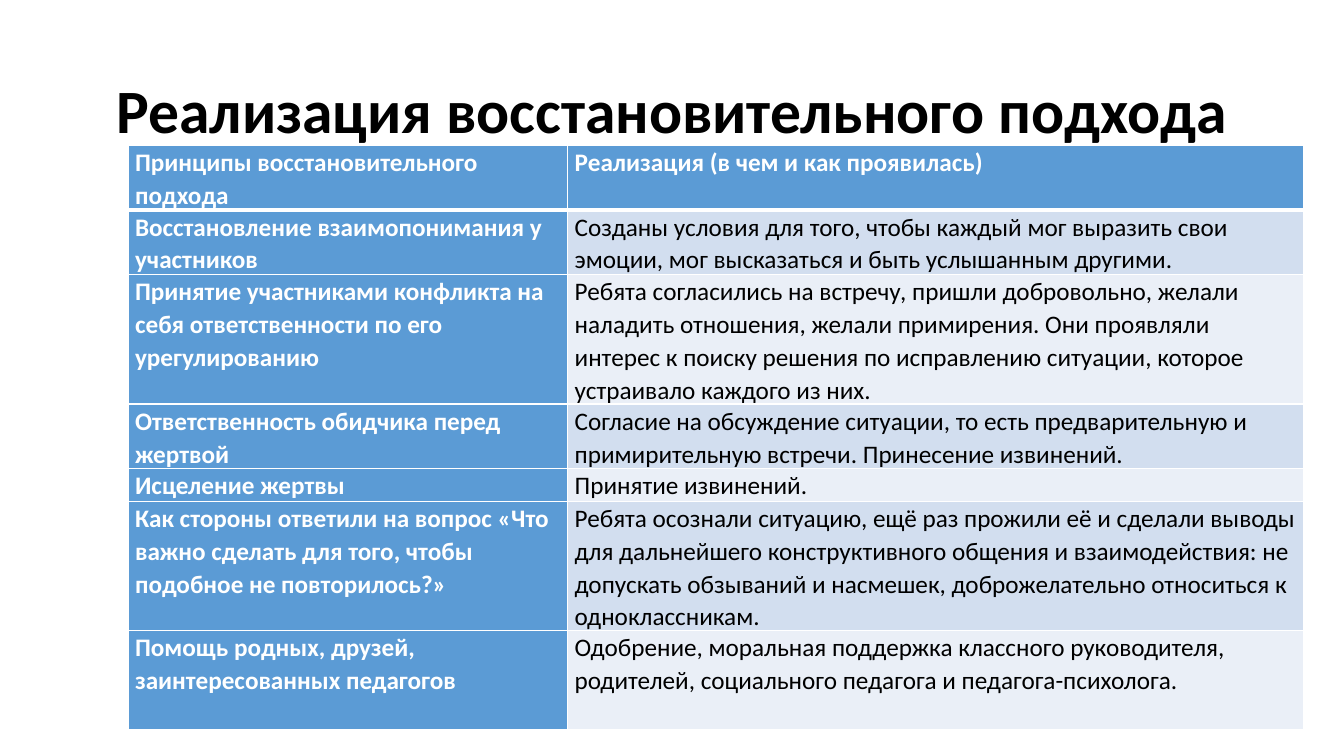
from lxml import etree
from pptx import Presentation
from pptx import util as u
from pptx.dml.color import RGBColor
from pptx.enum import text
from pptx.oxml.ns import qn

WHITE, BLACK, BLUE = "FFFFFF", "000000", "5B9BD5"
BANDS = ["EAEFF7", "D2DEEF"]


def add_span(para, words, size, color, bold):
    span = para.add_run()
    span.text = words
    span.font.name = "Calibri"
    span.font.size = u.Pt(size)
    span.font.bold = bold
    span.font.color.rgb = RGBColor.from_string(color)


def add_border(cell, side, points):
    line = etree.SubElement(cell._tc.get_or_add_tcPr(), qn(f"a:{side}"), w=str(u.Pt(points)))
    fill = etree.SubElement(line, qn("a:solidFill"))
    etree.SubElement(fill, qn("a:srgbClr"), val=WHITE)


deck = Presentation()
deck.slide_width, deck.slide_height = u.Inches(13.33), u.Inches(7.5)
page = deck.slides.add_slide(deck.slide_layouts[6])

# Title
box = page.shapes.add_textbox(u.Inches(0.92), u.Inches(0.4), u.Inches(11.5), u.Inches(1.45))
box.text_frame.word_wrap = True
box.text_frame.vertical_anchor = text.MSO_ANCHOR.MIDDLE
para = box.text_frame.paragraphs[0]
para.alignment = text.PP_ALIGN.CENTER
para.line_spacing = 0.9
add_span(para, "Реализация восстановительного подхода", 44, BLACK, True)

# Row height, principle, how it was carried out
principles = [
    (0.29, "Принципы восстановительного подхода", "Реализация (в чем и как проявилась)"),
    (0.58, "Восстановление взаимопонимания у участников",
     "Созданы условия для того, чтобы каждый мог выразить свои эмоции, "
     "мог высказаться и быть услышанным другими."),
    (1.17, "Принятие участниками конфликта на себя ответственности по его урегулированию",
     "Ребята согласились на встречу, пришли добровольно, желали наладить отношения, "
     "желали примирения. Они проявляли интерес к поиску решения по исправлению ситуации, "
     "которое устраивало каждого из них."),
    (0.58, "Ответственность обидчика перед жертвой",
     "Согласие на обсуждение ситуации, то есть предварительную и примирительную встречи. "
     "Принесение извинений."),
    (0.29, "Исцеление жертвы", "Принятие извинений."),
    (1.17, "Как стороны ответили на вопрос «Что важно сделать для того, чтобы подобное не повторилось?»",
     "Ребята осознали ситуацию, ещё раз прожили её и сделали выводы для дальнейшего "
     "конструктивного общения и взаимодействия: не допускать обзываний и насмешек, "
     "доброжелательно относиться к одноклассникам."),
    (0.98, "Помощь родных, друзей, заинтересованных педагогов",
     "Одобрение, моральная поддержка классного руководителя, родителей, "
     "социального педагога и педагога-психолога."),
]

# Table
height = sum(row[0] for row in principles)
table = page.shapes.add_table(len(principles), 2, u.Inches(1.27), u.Inches(1.44),
                              u.Inches(11.66), u.Inches(height)).table
table.first_col = True
for column, width in zip(table.columns, (4.36, 7.3)):
    column.width = u.Inches(width)

for r, (row_height, *words) in enumerate(principles):
    table.rows[r].height = u.Inches(row_height)
    for c, phrase in enumerate(words):
        cell = table.cell(r, c)
        heading = r == 0 or c == 0
        cell.margin_left = cell.margin_right = u.Inches(0.07)
        cell.margin_top = cell.margin_bottom = 0
        for side in ("lnL", "lnR", "lnT", "lnB"):
            thick = (r == 0 and side == "lnB") or (r == 1 and side == "lnT")
            add_border(cell, side, 3 if thick else 1)
        cell.fill.solid()
        cell.fill.fore_color.rgb = RGBColor.from_string(BLUE if heading else BANDS[r % 2])
        para = cell.text_frame.paragraphs[0]
        para.line_spacing = 1.07
        add_span(para, phrase, 18, WHITE if heading else BLACK, heading)

deck.save("out.pptx")
